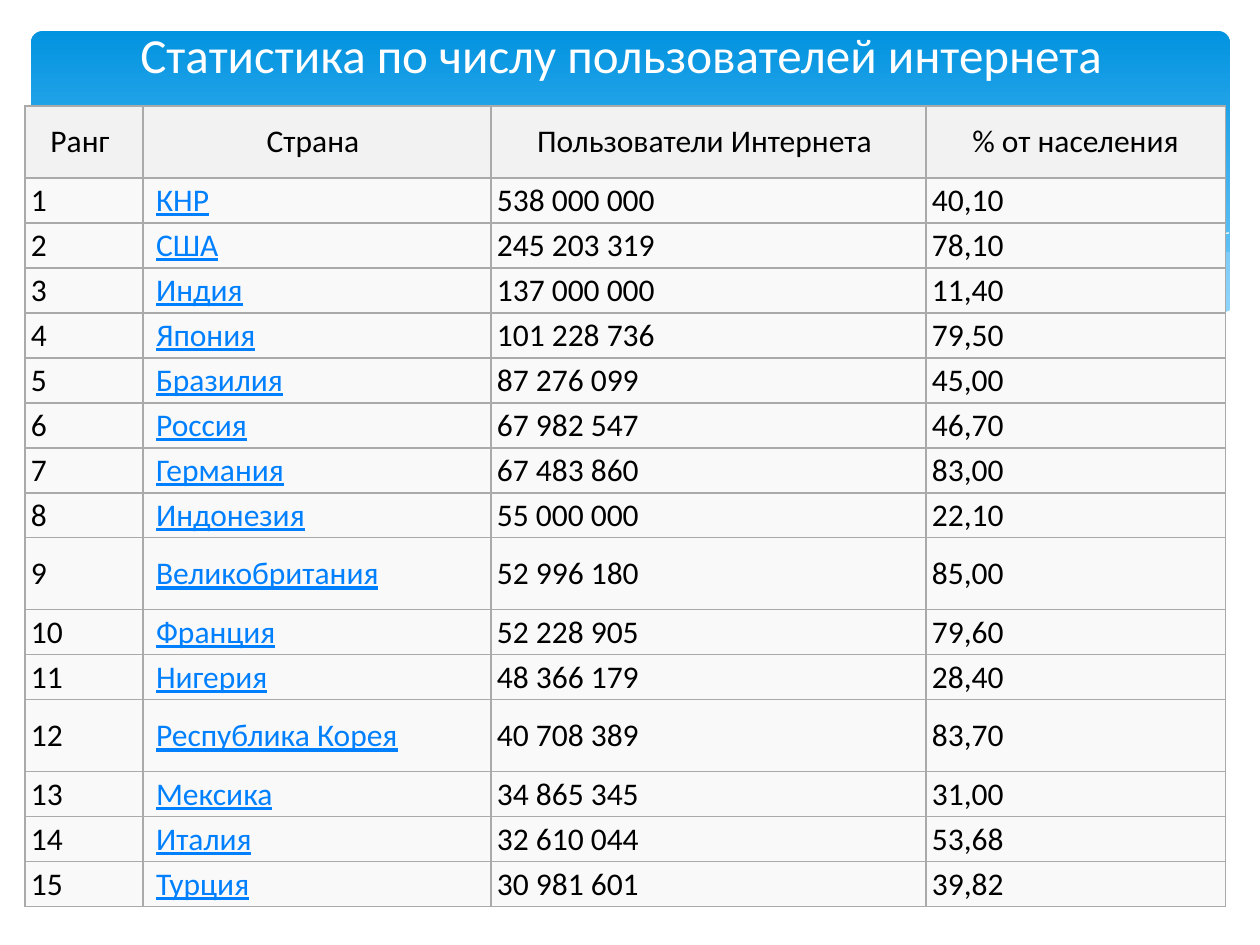
from lxml import etree
from pptx import Presentation
from pptx.dml.color import RGBColor
from pptx.enum.shapes import MSO_SHAPE
from pptx.enum.text import MSO_ANCHOR, MSO_AUTO_SIZE, PP_ALIGN
from pptx.oxml.ns import qn
from pptx.util import Pt

ROUND = MSO_SHAPE.ROUNDED_RECTANGLE
MIDDLE = MSO_ANCHOR.MIDDLE
FIXED = MSO_AUTO_SIZE.NONE
LEFT, CENTER = PP_ALIGN.LEFT, PP_ALIGN.CENTER
PX = 914400 / 126

THEME = {
    "font": "Calibri", "title": 28, "body": 18,
    "white": "FFFFFF", "black": "000000", "link": "0080FF",
    "deep": "0293E0", "sky": "83D3FE", "mist": "C6E7FC",
    "head": "F2F2F2", "row": "F9F9F9", "rule": "AAAAAA",
}


def rgb(name):
    return RGBColor.from_string(THEME[name])


def style(run, size, color):
    run.font.name = THEME["font"]
    run.font.size = Pt(THEME[size])
    run.font.color.rgb = rgb(color)


deck = Presentation()
deck.slide_width = round(1260 * PX)
deck.slide_height = round(945 * PX)
slide = deck.slides.add_slide(deck.slide_layouts[5])
shapes = slide.shapes

banner = shapes.add_shape(ROUND, *[round(n * PX) for n in (31, 31, 1199, 340)])
banner.adjustments[0] = 0.034
banner.shadow.inherit = False
banner.line.fill.background()
banner.fill.gradient()
banner.fill.gradient_angle = 270
for stop, place, color in zip(banner.fill.gradient_stops, (0, 0.9), ("deep", "sky")):
    stop.position = place
    stop.color.rgb = rgb(color)

right = [
    (1229, 252), (1195, 257), (1142, 268), (1085, 281), (1014, 298), (949, 312),
    (890, 324), (833, 334), (888, 341), (939, 346), (984, 349), (1026, 350),
    (1064, 349), (1099, 345), (1130, 340), (1160, 334), (1187, 327), (1213, 318),
    (1230, 311), (1230, 252),
]
middle = [
    (1125, 344), (1055, 334), (977, 320), (890, 302), (793, 280), (736, 266),
    (682, 255), (632, 247), (586, 241), (529, 236), (479, 233), (433, 234),
    (394, 237), (360, 241), (407, 247), (456, 256), (509, 266), (566, 280),
    (668, 302), (757, 321), (819, 333), (876, 340), (927, 347), (974, 350),
    (1017, 350), (1056, 350), (1092, 348),
]
falling = [
    (389, 246), (422, 241), (457, 238), (505, 236), (567, 237), (616, 239),
    (672, 244), (733, 252), (801, 262), (876, 276), (958, 294), (1047, 316),
    (1143, 343),
]
rising = [
    (772, 324), (823, 310), (876, 296), (942, 281), (1016, 265), (1091, 251),
    (1146, 242), (1198, 236), (1229, 233),
]
front = [
    (1231, 310), (1208, 319), (1184, 326), (1159, 334), (1133, 339), (1102, 344),
    (1071, 347), (1037, 349), (999, 348), (959, 346), (915, 343), (867, 338),
    (816, 330), (760, 320), (699, 309), (634, 294), (563, 277), (492, 261),
    (428, 248), (368, 239), (315, 234), (266, 232), (223, 232), (184, 233),
    (150, 236), (120, 241), (96, 246), (74, 251), (58, 256), (45, 261),
    (32, 267), (29, 268), (29, 415), (1231, 415),
]
waves = [
    (right, "mist", 29), (middle, "mist", 40), (falling, None, 0),
    (rising, None, 0), (front, "white", 100),
]
for points, color, alpha in waves:
    pen = shapes.build_freeform(*points[0], scale=PX)
    pen.add_line_segments(points[1:], close=color is not None)
    wave = pen.convert_to_shape()
    wave.shadow.inherit = False
    if color is None:
        wave.fill.background()
        wave.line.color.rgb = rgb("white")
        wave.line.width = 0
        continue
    wave.line.fill.background()
    wave.fill.solid()
    wave.fill.fore_color.rgb = rgb(color)
    if alpha < 100:
        tint = wave._element.spPr.find(".//" + qn("a:srgbClr"))
        etree.SubElement(tint, qn("a:alpha"), val=str(alpha * 1000))

heads = ["Ранг", "Страна", "Пользователи Интернета", " % от населения"]
data = [
    ("КНР", "538 000 000", "40,10"),
    ("США", "245 203 319", "78,10"),
    ("Индия", "137 000 000", "11,40"),
    ("Япония", "101 228 736", "79,50"),
    ("Бразилия", "87 276 099", "45,00"),
    ("Россия", "67 982 547", "46,70"),
    ("Германия", "67 483 860", "83,00"),
    ("Индонезия", "55 000 000", "22,10"),
    ("Великобритания", "52 996 180", "85,00"),
    ("Франция", "52 228 905", "79,60"),
    ("Нигерия", "48 366 179", "28,40"),
    ("Республика Корея", "40 708 389", "83,70"),
    ("Мексика", "34 865 345", "31,00"),
    ("Италия", "32 610 044", "53,68"),
    ("Турция", "30 981 601", "39,82"),
]
rows = [heads] + [(str(rank), *item) for rank, item in enumerate(data, 1)]
widths = [118, 348, 435, 300]
highs = [72 if n in (0, 9, 12) else 45 for n in range(len(rows))]
area = (25, 106, sum(widths), sum(highs))
table = shapes.add_table(len(rows), len(widths), *[round(n * PX) for n in area]).table
table.first_row = False
table.horz_banding = False
for col, width in zip(table.columns, widths):
    col.width = round(width * PX)
for line, high in zip(table.rows, highs):
    line.height = round(high * PX)

for r, row in enumerate(rows):
    for c, text in enumerate(row):
        cell = table.cell(r, c)
        cell.vertical_anchor = MIDDLE
        cell.margin_left = round(6 * PX)
        cell.margin_right = round((6 if r else 14) * PX)
        cell.margin_top = cell.margin_bottom = round(3 * PX)
        props = cell._tc.get_or_add_tcPr()
        for side in ("lnL", "lnR", "lnT", "lnB"):
            edge = etree.SubElement(props, qn("a:" + side), w=str(Pt(0.75)))
            paint = etree.SubElement(edge, qn("a:solidFill"))
            etree.SubElement(paint, qn("a:srgbClr"), val=THEME["rule"])
        cell.fill.solid()
        cell.fill.fore_color.rgb = rgb("row" if r else "head")
        para = cell.text_frame.paragraphs[0]
        para.alignment = LEFT if r else CENTER
        link = r > 0 and c == 1
        para.text = " " if link else text
        style(para.runs[0], "body", "black")
        if link:
            name = para.add_run()
            name.text = text
            style(name, "body", "link")
            name.font.underline = True

title = shapes.title
title.left, title.top, title.width, title.height = [
    round(n * PX) for n in (54, 0, 1134, 108)
]
frame = title.text_frame
frame.text = "Статистика по числу пользователей интернета"
frame.auto_size = FIXED
frame.word_wrap = True
frame.vertical_anchor = MIDDLE
frame.paragraphs[0].alignment = CENTER
style(frame.paragraphs[0].runs[0], "title", "white")
shapes._spTree.append(title._element)

deck.save("out.pptx")
